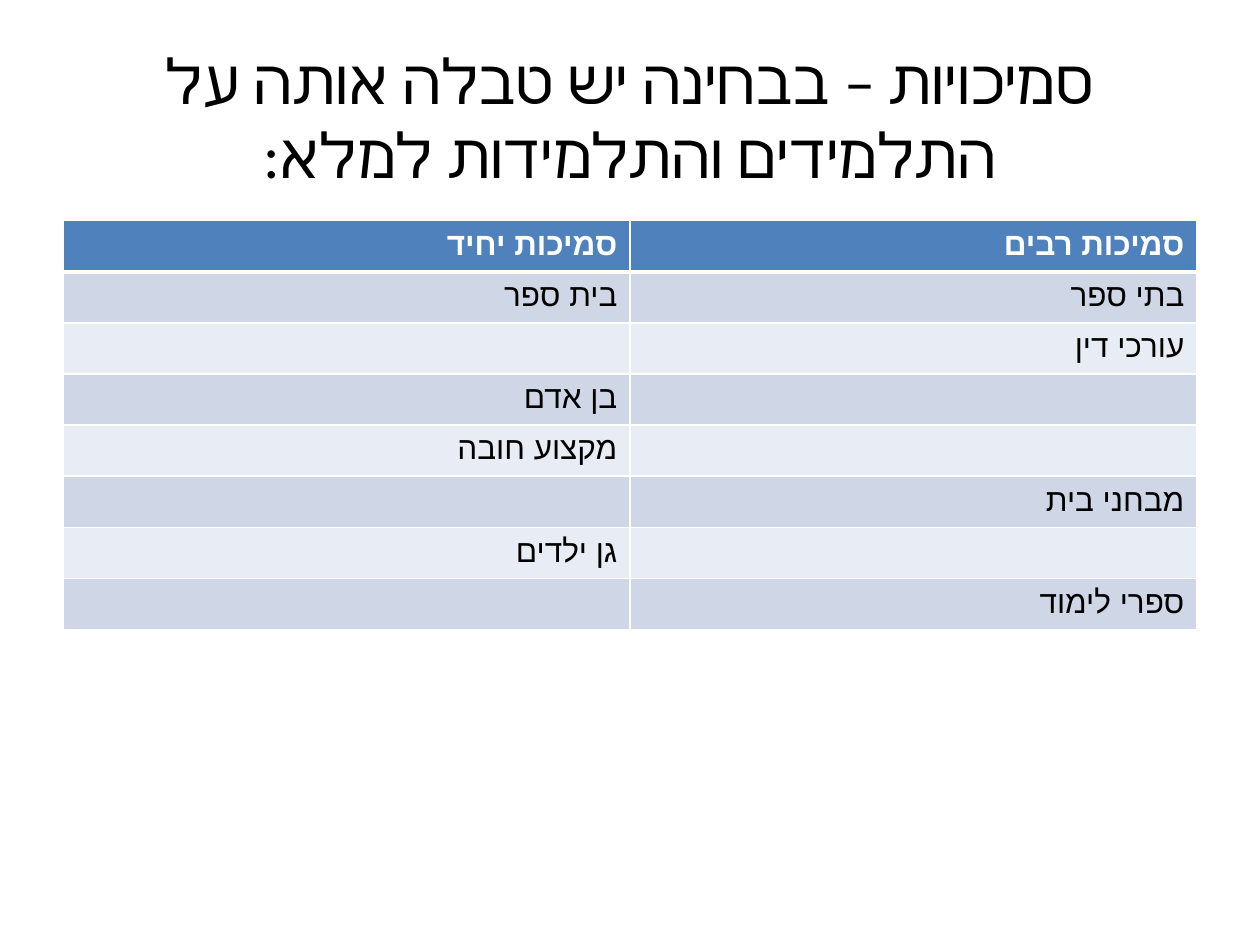
from lxml.etree import SubElement as Sub
from pptx import Presentation
from pptx.dml.color import RGBColor as Rgb
from pptx.enum.text import MSO_ANCHOR as Anchor, PP_ALIGN as Align
from pptx.oxml.ns import qn
from pptx.util import Cm, Pt

HUES = {"head": "4F81BD", "dark": "CFD7E7", "light": "E8ECF4",
        "white": "FFFFFF", "black": "000000"}


def write(frame, text, size=18, font="Arial", hue="black", bold=False, align=Align.RIGHT):
    para = frame.paragraphs[0]
    para.alignment = align
    para._p.get_or_add_pPr().set("rtl", "1")
    if not text:
        para.font.size = Pt(size)
        return
    run = para.add_run()
    run.text = text
    run.font.size = Pt(size)
    run.font.name = font
    run.font.bold = bold
    run.font.color.rgb = Rgb.from_string(HUES[hue])
    Sub(run._r.get_or_add_rPr(), qn("a:cs"), typeface=font)


def edge(cell, sides):
    props = cell._tc.get_or_add_tcPr()
    for spot, (side, width) in enumerate(sides.items()):
        line = Sub(props, qn("a:ln" + side), w=str(Pt(width)))
        fill = Sub(line, qn("a:solidFill"))
        Sub(fill, qn("a:srgbClr"), val=HUES["white"])
        props.insert(spot, line)


deck = Presentation()
deck.slide_width, deck.slide_height = Cm(25.4), Cm(19.05)
slide = deck.slides.add_slide(deck.slide_layouts[6])

title = slide.shapes.add_textbox(Cm(1.27), Cm(0.76), Cm(22.86), Cm(3.18)).text_frame
title.word_wrap = True
title.vertical_anchor = Anchor.MIDDLE
write(title, "סמיכויות – בבחינה יש טבלה אותה על התלמידים והתלמידות למלא:",
      size=35.6, font="Calibri", align=Align.CENTER)

rows = [
    ("סמיכות יחיד", "סמיכות רבים"),
    ("בית ספר", "בתי ספר"),
    ("", "עורכי דין"),
    ("בן אדם", ""),
    ("מקצוע חובה", ""),
    ("", "מבחני בית"),
    ("גן ילדים", ""),
    ("", "ספרי לימוד"),
]
high = Cm(1.03)
grid = slide.shapes.add_table(len(rows), 2, Cm(1.27), Cm(4.45),
                              Cm(22.86), high * len(rows)).table
for r, texts in enumerate(rows):
    grid.rows[r].height = high
    head = r == 0
    band = "head" if head else "dark" if r % 2 else "light"
    for c, text in enumerate(texts):
        cell = grid.cell(r, c)
        cell.fill.solid()
        cell.fill.fore_color.rgb = Rgb.from_string(HUES[band])
        edge(cell, {"L": 1, "R": 1, "T": 3 if r == 1 else 1, "B": 3 if head else 1})
        write(cell.text_frame, text, hue="white" if head else "black", bold=head)

deck.save("out.pptx")
